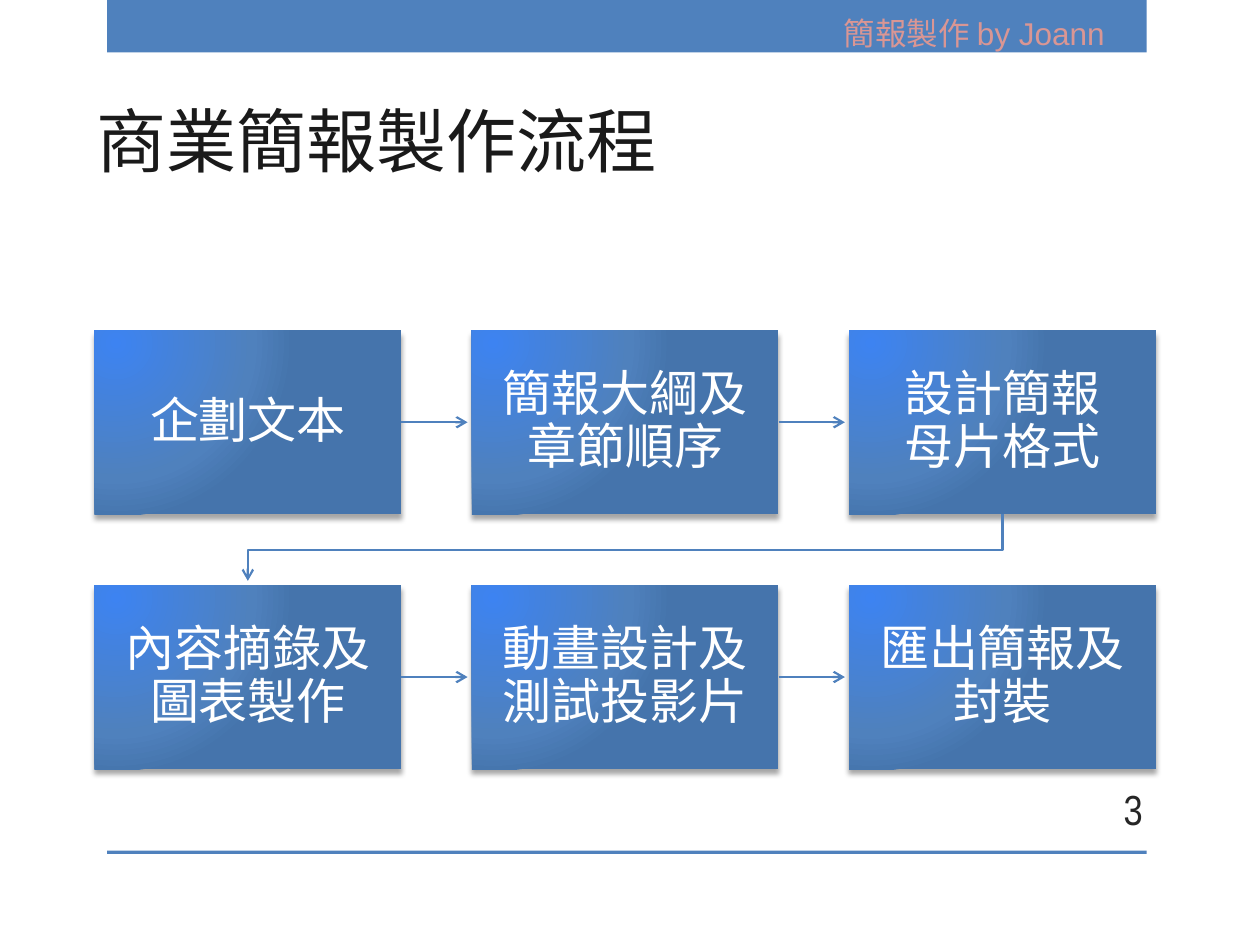
from lxml.etree import SubElement
from pptx import Presentation
from pptx.dml.color import RGBColor
from pptx.enum.shapes import MSO_CONNECTOR, MSO_SHAPE
from pptx.enum.text import MSO_ANCHOR, PP_ALIGN
from pptx.oxml import parse_xml
from pptx.oxml.ns import nsdecls, qn
from pptx.util import Pt

COLORS = {
    "blue": "4F81BD", "bright": "3D83F1", "deep": "4574AC", "pink": "D99694",
    "title": "1A1A1A", "number": "262626", "white": "FFFFFF", "shadow": "000000",
}
STEPS = [
    ["企劃文本", "簡報大綱及 章節順序", "設計簡報 母片格式"],
    ["內容摘錄及 圖表製作", "動畫設計及測試投影片", "匯出簡報及 封裝"],
]
LEFT, TOP, WIDTH, HEIGHT = 54, 188.7, 175.3, 105.2
COLUMN_STEP, ROW_STEP = 215.6, 145.6
ARROW_GAP = 2.4

GRADIENT = f"""<a:gradFill rotWithShape="1" {nsdecls('a')}><a:gsLst>
<a:gs pos="0"><a:srgbClr val="{COLORS['bright']}"/></a:gs>
<a:gs pos="76000"><a:srgbClr val="{COLORS['blue']}"/></a:gs>
<a:gs pos="100000"><a:srgbClr val="{COLORS['deep']}"/></a:gs></a:gsLst>
<a:path path="circle"><a:fillToRect l="15000" t="15000" r="100000" b="100000"/></a:path>
</a:gradFill>"""
SHADOW = f"""<a:effectLst {nsdecls('a')}>
<a:outerShdw blurRad="38100" dist="38100" dir="5400000" rotWithShape="0">
<a:srgbClr val="{COLORS['shadow']}"><a:alpha val="35000"/></a:srgbClr>
</a:outerShdw></a:effectLst>"""


def write(shape, text, font, size, color, align, anchor, margins):
    frame = shape.text_frame
    frame.word_wrap = True
    frame.vertical_anchor = anchor
    sides = ("left", "top", "right", "bottom")
    for side, margin in zip(sides, margins):
        setattr(frame, f"margin_{side}", Pt(margin))
    para = frame.paragraphs[0]
    para.alignment = align
    span = para.add_run()
    span.text = text
    formats = {"name": font, "size": Pt(size), "bold": False}
    for name, value in formats.items():
        setattr(span.font, name, value)
    span.font.color.rgb = RGBColor.from_string(COLORS[color])
    return para


def style_arrow(arrow):
    arrow.line.color.rgb = RGBColor.from_string(COLORS["blue"])
    arrow.line.width = Pt(1.25)
    SubElement(arrow.line._get_or_add_ln(), qn("a:tailEnd"), type="arrow")
    SubElement(arrow._element.spPr, qn("a:effectLst"))


deck = Presentation()
deck.slide_width, deck.slide_height = Pt(720), Pt(540)
page = deck.slides.add_slide(deck.slide_layouts[5])
shapes = page.shapes

# Top band and bottom rule
for top, height in [(0, 30), (486, 2)]:
    band = shapes.add_shape(MSO_SHAPE.RECTANGLE, Pt(61.2), Pt(top), Pt(594), Pt(height))
    band.shadow.inherit = False
    band.fill.solid()
    band.fill.fore_color.rgb = RGBColor.from_string(COLORS["blue"])
    band.line.fill.background()

# Title, credit line and page number
title = shapes.title
place = {"left": 48.2, "top": 49, "width": 553, "height": 58.3}
for name, value in place.items():
    setattr(title, name, Pt(value))
inset = (7.2, 3.6, 7.2, 3.6)
write(title, "商業簡報製作流程", "Arial Narrow", 40, "title", PP_ALIGN.LEFT,
      MSO_ANCHOR.BOTTOM, inset)
credit = shapes.add_textbox(Pt(475.2), Pt(4.3), Pt(180), Pt(29))
write(credit, "簡報製作 by Joann", "Arial", 18, "pink", PP_ALIGN.LEFT,
      MSO_ANCHOR.TOP, inset)
number = shapes.add_textbox(Pt(600), Pt(448), Pt(60), Pt(28.8))
write(number, "3", "Arial Narrow", 24, "number", PP_ALIGN.RIGHT,
      MSO_ANCHOR.MIDDLE, inset)

# Process steps, each joined to the next one in its row
for row, labels in enumerate(STEPS):
    top = TOP + row * ROW_STEP
    for column, label in enumerate(labels):
        left = LEFT + column * COLUMN_STEP
        box = shapes.add_shape(MSO_SHAPE.RECTANGLE, Pt(left), Pt(top), Pt(WIDTH), Pt(HEIGHT))
        box.line.fill.background()
        properties = box._element.spPr
        properties.insert(2, parse_xml(GRADIENT))
        properties.append(parse_xml(SHADOW))
        para = write(box, label, "Times New Roman", 28, "white", PP_ALIGN.CENTER,
                     MSO_ANCHOR.MIDDLE, (15.8,) * 4)
        para.line_spacing = 0.9
        if column < len(labels) - 1:
            middle = Pt(top + HEIGHT / 2)
            arrow = shapes.add_connector(
                MSO_CONNECTOR.STRAIGHT, Pt(left + WIDTH), middle,
                Pt(left + COLUMN_STEP - ARROW_GAP), middle)
            style_arrow(arrow)

# Bent arrow from the end of the first row to the start of the second
first_center = LEFT + WIDTH / 2
last_center = first_center + 2 * COLUMN_STEP
bend = TOP + (HEIGHT + ROW_STEP) / 2
outline = shapes.build_freeform(Pt(last_center), Pt(TOP + HEIGHT))
corners = [(last_center, bend), (first_center, bend),
           (first_center, TOP + ROW_STEP - ARROW_GAP)]
outline.add_line_segments([(Pt(x), Pt(y)) for x, y in corners], close=False)
return_arrow = outline.convert_to_shape()
return_arrow.fill.background()
style_arrow(return_arrow)

deck.save("out.pptx")
